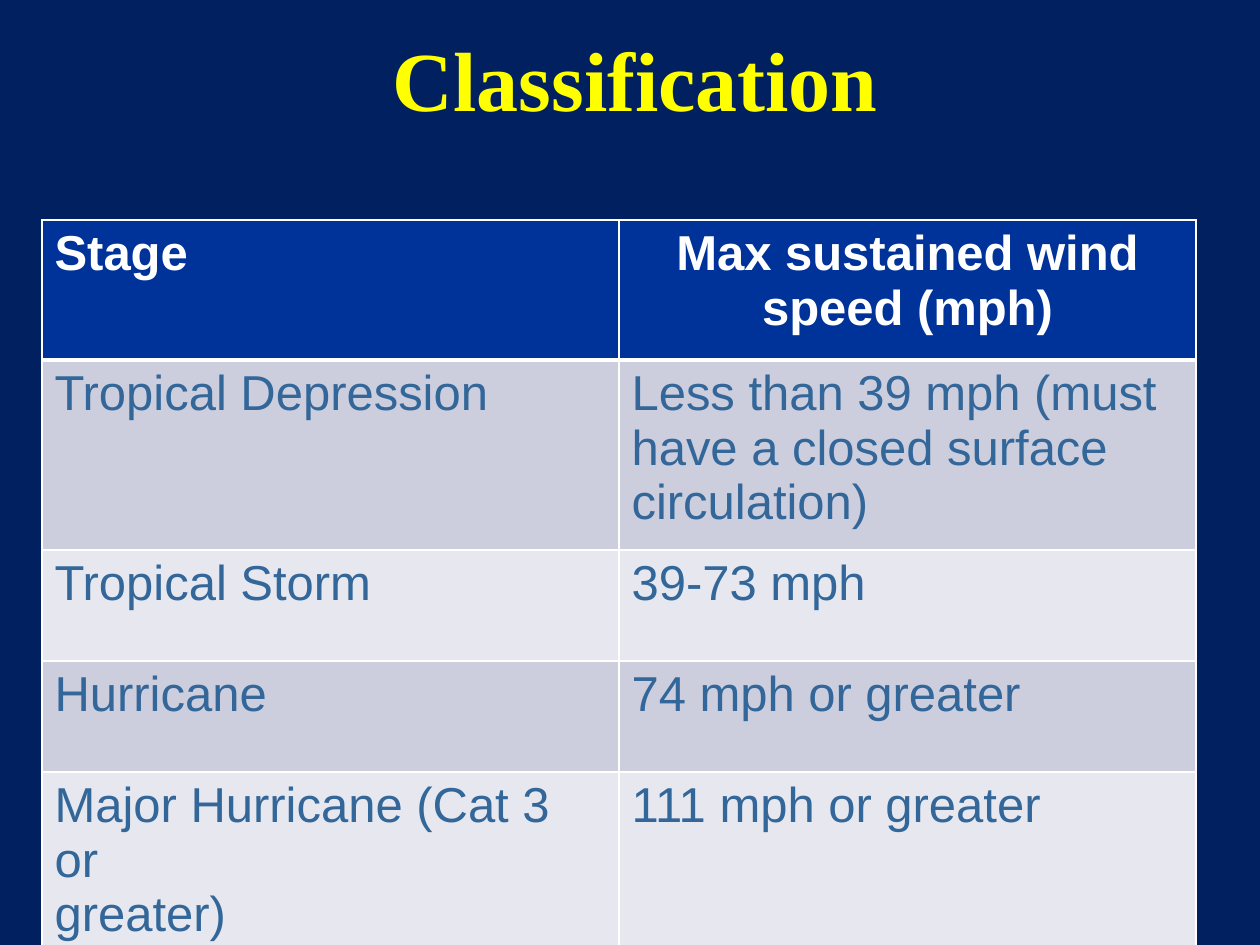
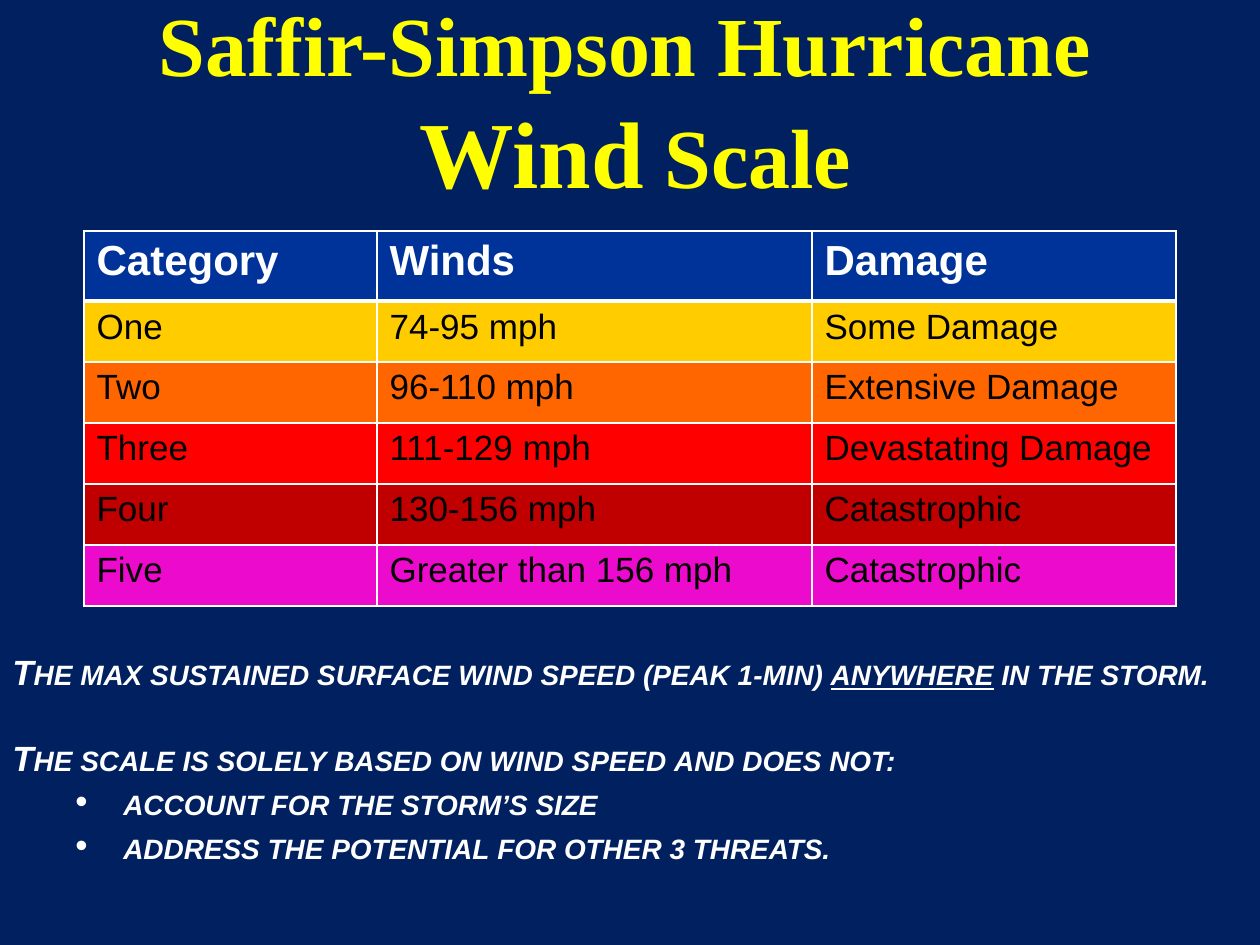
from lxml import etree
from pptx import Presentation
from pptx import util as u
from pptx.dml.color import RGBColor
from pptx.enum import text
from pptx.oxml import parse_xml
from pptx.oxml.ns import nsdecls, qn

PX = 914400 / 126
NAVY, BLUE, WHITE, YELLOW = "002060", "003399", "FFFFFF", "FFFF00"
STEEL, BLACK = "336699", "000000"
BAND_DARK, BAND_LIGHT = "CCCEDE", "E7E8EF"
CENTER = text.PP_ALIGN.CENTER


def px(length):
    return u.Emu(round(length * PX))


def style(font, size, color, name="Arial", bold=False, italic=False):
    font.name, font.size = name, u.Pt(size)
    font.bold, font.italic = bold, italic
    font.color.rgb = RGBColor.from_string(color)


presentation = Presentation()
presentation.slide_width, presentation.slide_height = px(1260), px(945)

# Each slide: a title with sized pieces, and a table with one fill per row
pages = [
    {
        "title": [("Classification", 48)],
        "title_top": -1,
        "position": (42, 220),
        "columns": [577, 577],
        "heights": [140, 190, 111, 111, 111],
        "sizes": (28, 28),
        "body_color": STEEL,
        "centered_headers": [1],
        "fills": [BLUE, BAND_DARK, BAND_LIGHT, BAND_DARK, BAND_LIGHT],
        "rows": [
            ("Stage", "Max sustained wind speed (mph)"),
            ("Tropical Depression",
             "Less than 39 mph (must have a closed surface circulation)"),
            ("Tropical Storm", "39-73 mph"),
            ("Hurricane", "74 mph or greater"),
            ("Major Hurricane (Cat 3 or\ngreater)", "111 mph or greater"),
        ],
    },
    {
        "title": [("Saffir-Simpson Hurricane \v", 48), ("Wind", 54), (" Scale", 48)],
        "title_top": 21,
        "position": (84, 231),
        "columns": [293, 435, 364],
        "heights": [70] + [61] * 5,
        "sizes": (24, 20),
        "body_color": BLACK,
        "centered_headers": [],
        "fills": [BLUE, "FFCC00", "FF6600", "FF0000", "C00000", "EC0ACC"],
        "rows": [
            ("Category", "Winds", "Damage"),
            ("One", "74-95 mph", "Some Damage"),
            ("Two", "96-110 mph", "Extensive Damage"),
            ("Three", "111-129 mph", "Devastating Damage"),
            ("Four", "130-156 mph", "Catastrophic"),
            ("Five", "Greater than 156 mph", "Catastrophic"),
        ],
    },
]

for page in pages:
    slide = presentation.slides.add_slide(presentation.slide_layouts[6])
    slide.background.fill.solid()
    slide.background.fill.fore_color.rgb = RGBColor.from_string(NAVY)

    # Table
    rows, columns, heights = page["rows"], page["columns"], page["heights"]
    left, top = page["position"]
    table = slide.shapes.add_table(
        len(rows), len(columns), px(left), px(top), px(sum(columns)), px(sum(heights))
    ).table
    table.horz_banding = False
    for column, width in zip(table.columns, columns):
        column.width = px(width)
    for row_index, values in enumerate(rows):
        table.rows[row_index].height = px(heights[row_index])
        header = row_index == 0
        for column_index, value in enumerate(values):
            cell = table.cell(row_index, column_index)
            cell.text = value
            for paragraph in cell.text_frame.paragraphs:
                if header:
                    style(paragraph.font, page["sizes"][0], WHITE, bold=True)
                    if column_index in page["centered_headers"]:
                        paragraph.alignment = CENTER
                else:
                    style(paragraph.font, page["sizes"][1], page["body_color"])
            # White rules, with a thick one under the header
            properties = cell._tc.get_or_add_tcPr()
            for side in "LRTB":
                thick = (row_index, side) in [(0, "B"), (1, "T")]
                properties.append(parse_xml(
                    f'<a:ln{side} {nsdecls("a")} w="{u.Pt(3 if thick else 1)}">'
                    f'<a:solidFill><a:srgbClr val="{WHITE}"/></a:solidFill></a:ln{side}>'))
            cell.fill.solid()
            cell.fill.fore_color.rgb = RGBColor.from_string(page["fills"][row_index])

    # Title
    title = slide.shapes.add_textbox(px(42), px(page["title_top"]), px(1187), px(158))
    title.text_frame.word_wrap = True
    title.text_frame.vertical_anchor = text.MSO_ANCHOR.MIDDLE
    paragraph = title.text_frame.paragraphs[0]
    paragraph.alignment = CENTER
    for piece, size in page["title"]:
        for index, part in enumerate(piece.split("\v")):
            if index:
                paragraph.add_line_break()
            if part:
                run = paragraph.add_run()
                run.text = part
                style(run.font, size, YELLOW, "Times New Roman", bold=True)

# Notes under the wind scale: (runs, bulleted, points before)
notes = [
    (["The max sustained surface wind speed (peak 1-min) ", "anywhere",
      " in the storm."], False, 0),
    (["The scale is solely based on wind speed and does not:"], False, 24),
    (["account for the storm’s size"], True, 0),
    (["address the potential for other 3 threats."], True, 0),
]
notes_box = slide.shapes.add_textbox(px(0), px(642), px(1260), px(267))
frame = notes_box.text_frame
frame.word_wrap = True
for index, (pieces, bulleted, before) in enumerate(notes):
    paragraph = frame.add_paragraph() if index else frame.paragraphs[0]
    paragraph.line_spacing = 1.05
    if before:
        paragraph.space_before = u.Pt(before)
    if bulleted:
        properties = paragraph._p.get_or_add_pPr()
        properties.set("marL", str(px(111)))
        properties.set("indent", str(px(-48)))
        etree.SubElement(properties, qn("a:buFont"), typeface="Arial")
        etree.SubElement(properties, qn("a:buChar"), char="•")
    style(paragraph.font, 20, WHITE, bold=True, italic=True)
    for piece in pieces:
        run = paragraph.add_run()
        run.text = piece
        run._r.get_or_add_rPr().set("cap", "small")
        if piece == "anywhere":
            run.font.underline = True

presentation.save("out.pptx")
